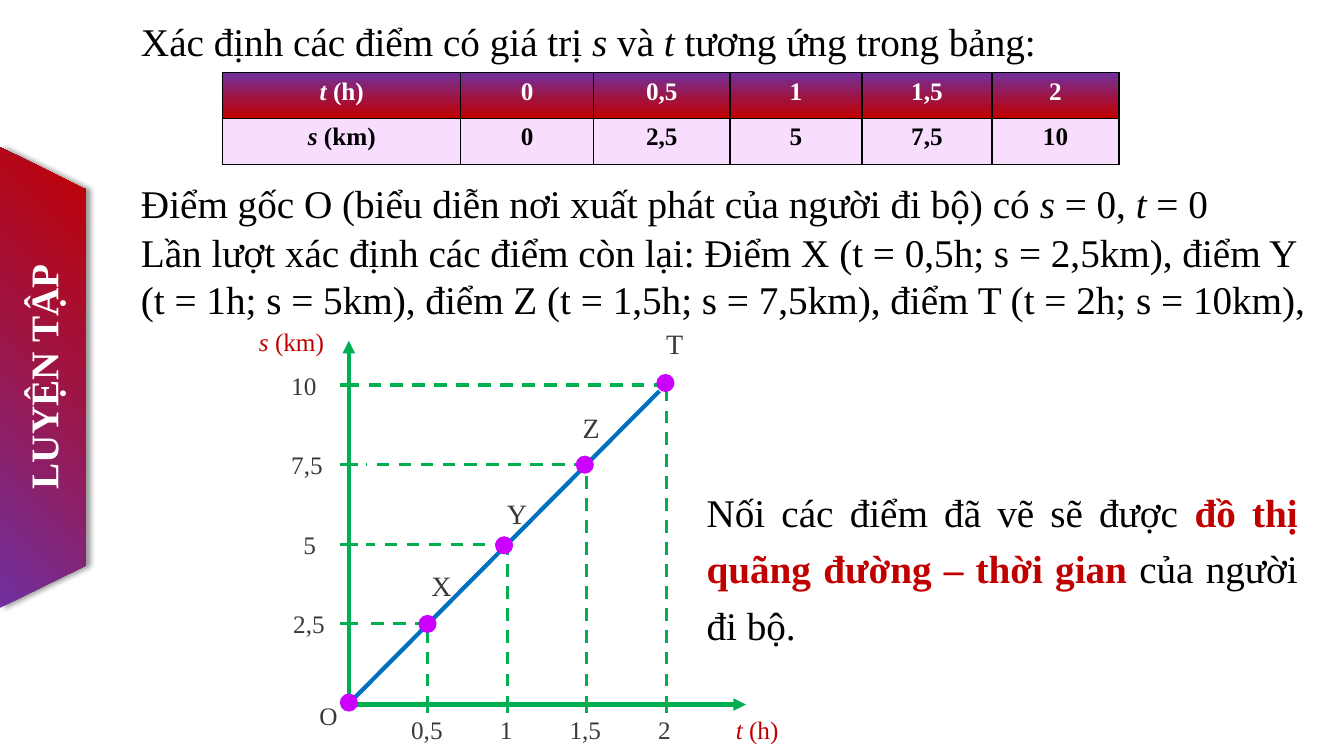
from lxml.etree import SubElement
from pptx import Presentation
from pptx.dml.color import RGBColor
from pptx.enum.dml import MSO_LINE
from pptx.enum.shapes import MSO_CONNECTOR, MSO_SHAPE
from pptx.enum.text import MSO_AUTO_SIZE, PP_ALIGN
from pptx.oxml.ns import qn
from pptx.util import Inches, Pt

# Content: a run is (text, style), style holds "b", "i" or a colour
FONT = "Times New Roman"
BLACK, WHITE, GRAY, RED = "000000", "FFFFFF", "3B3838", "C00000"
GREEN, BLUE, PURPLE, PINK = "00B050", "0070C0", "CC00FF", "F9DDFF"
BLEND = [(0, "7030A0"), (57, "A1133E"), (100, RED)]

LINES = [
    ((1.3, 0.12, 11.09, 0.57),
     [("Xác định các điểm có giá trị ",), ("s ", "i"), ("và ",), ("t", "i"),
      (" tương ứng trong bảng:",)]),
    ((1.3, 1.73, 11.09, 0.57),
     [("Điểm gốc O (biểu diễn nơi xuất phát của người đi bộ) có ",),
      ("s", "i"), (" = 0, ",), ("t", "i"), (" = 0",)]),
    ((1.3, 2.22, 11.9, 1.04),
     [("Lần lượt xác định các điểm còn lại: Điểm X (t = 0,5h; s = 2,5km), "
       "điểm Y (t = 1h; s = 5km), điểm Z (t = 1,5h; s = 7,5km), "
       "điểm T (t = 2h; s = 10km),",)]),
]
NOTE = [("Nối các điểm đã vẽ sẽ được ",),
        ("đồ thị quãng đường – thời gian ", "b", RED),
        ("của người đi bộ.",)]
ROWS = [
    ([("t", "i"), (" (h)",)], "0", "0,5", "1", "1,5", "2"),
    ([("s", "i"), (" (km)",)], "0", "2,5", "5", "7,5", "10"),
]
COLS = [2.36, 1.32, 1.35, 1.31, 1.29, 1.26]

# Axis marks: (label, left, width) along t, (label, left) along s
T_MARKS = [("0,5", 3.98, 0.63), ("1", 4.86, 0.33),
           ("1,5", 5.55, 0.58), ("2", 6.43, 0.33)]
S_MARKS = [("2,5", 2.81), ("5", 2.91), ("7,5", 2.79), ("10", 2.79)]
# Points: (name, dot centre, label corner)
POINTS = [("X", (4.24, 6.19), (4.18, 5.59)), ("Y", (5, 5.41), (4.93, 4.88)),
          ("Z", (5.8, 4.61), (5.68, 4.02)), ("T", (6.6, 3.8), (6.51, 3.19))]
LEFT, BASE, STEP, DOT = 3.45, 6.98, 0.79, 0.18

deck = Presentation()
deck.slide_width, deck.slide_height = Inches(13.33), Inches(7.5)
slide = deck.slides.add_slide(deck.slide_layouts[6])
shapes = slide.shapes


def color(code):
    return RGBColor.from_string(code)


def box(at):
    return [Inches(n) for n in at]


def write(frame, text, size=18, ink=GRAY, bold=False,
          align=PP_ALIGN.LEFT, space=None):
    para = frame.paragraphs[0]
    para.alignment = align
    if space:
        para.line_spacing = space
    for part, *style in [(text,)] if isinstance(text, str) else text:
        run = para.add_run()
        run.text = part
        font = run.font
        font.name, font.size = FONT, Pt(size)
        font.bold, font.italic = bold or "b" in style, "i" in style
        hues = [s for s in style if len(s) == 6]
        font.color.rgb = color(hues[0] if hues else ink)


def label(at, text, turn=0, **form):
    item = shapes.add_textbox(*box(at))
    item.rotation = turn
    frame = item.text_frame
    frame.word_wrap = True
    frame.auto_size = MSO_AUTO_SIZE.SHAPE_TO_FIT_TEXT
    write(frame, text, **form)


def line(start, end, ink=GREEN, width=2.25, dash=False, arrow=False):
    item = shapes.add_connector(MSO_CONNECTOR.STRAIGHT, *box(start + end))
    item.line.color.rgb, item.line.width = color(ink), Pt(width)
    if dash:
        item.line.dash_style = MSO_LINE.DASH
    if arrow:
        SubElement(item.line._get_or_add_ln(), qn("a:tailEnd"), type="triangle")
    SubElement(item._element.spPr, qn("a:effectLst"))


def dot(x, y):
    item = shapes.add_shape(MSO_SHAPE.OVAL,
                            *box((x - DOT / 2, y - DOT / 2, DOT, DOT)))
    item.shadow.inherit = False
    item.fill.solid()
    item.fill.fore_color.rgb = color(PURPLE)
    item.line.fill.background()


def tint(node, code, alpha=None):
    hue = SubElement(node, qn("a:srgbClr"), val=code)
    if alpha:
        SubElement(hue, qn("a:alpha"), val=str(alpha * 1000))


def blend(fill, owner, angle):
    fill.gradient()
    grad = owner.find(qn("a:gradFill"))
    for child in list(grad):
        grad.remove(child)
    grad.set("rotWithShape", "1")
    stops = SubElement(grad, qn("a:gsLst"))
    for pos, code in BLEND:
        tint(SubElement(stops, qn("a:gs"), pos=str(pos * 1000)), code)
    SubElement(grad, qn("a:lin"), ang=str(angle * 60000), scaled="0")


def border(cell):
    props = cell._tc.get_or_add_tcPr()
    for side in ("lnL", "lnR", "lnT", "lnB"):
        edge = SubElement(props, qn("a:" + side), w=str(Pt(1)))
        tint(SubElement(edge, qn("a:solidFill")), BLACK)
    return props


# Graph line, below everything else
line((3.52, 6.92), (6.54, 3.88), ink=BLUE, width=3)

# Side tab
tab = shapes.add_shape(MSO_SHAPE.TRAPEZOID, *box((-1.86, 3.32, 4.57, 0.85)))
tab.rotation = 90
tab.adjustments[0] = 0.493
tab.line.fill.background()
tab.shadow.inherit = False
blend(tab.fill, tab._element.spPr, 225)
glow = SubElement(tab._element.spPr.find(qn("a:effectLst")), qn("a:outerShdw"),
                  blurRad=str(Pt(4)), dist=str(Pt(3)), dir="0",
                  algn="l", rotWithShape="0")
tint(glow, BLACK, 40)
label((-0.87, 3.37, 2.59, 0.57), "LUYỆN TẬP", turn=270, size=28,
      ink=WHITE, bold=True)

# Main text
for at, text in LINES:
    label(at, text, size=28, ink=BLACK)

# Table
grid = shapes.add_table(2, 6, *box((2.21, 0.72, sum(COLS), 0.91))).table
grid.first_row = grid.horz_banding = False
for col, width in zip(grid.columns, COLS):
    col.width = Inches(width)
for r, row in enumerate(ROWS):
    for c, text in enumerate(row):
        cell = grid.cell(r, c)
        props = border(cell)
        if r == 0:
            blend(cell.fill, props, 90)
        else:
            cell.fill.solid()
            cell.fill.fore_color.rgb = color(PINK)
        write(cell.text_frame, text, ink=BLACK if r else WHITE, bold=True,
              align=PP_ALIGN.CENTER)

# Axes
line((3.46, 6.97), (3.46, 3.38), width=3, arrow=True)
line((3.46, 6.99), (7.4, 6.99), width=3, arrow=True)
label((3.07, 6.9, 0.33, 0.4), "O")
label((7.2, 7.04, 0.73, 0.4), [("t ", "i"), ("(h)",)], ink=RED)
label((2.47, 3.19, 0.9, 0.4), [("s ", "i"), ("(km)",)], ink=RED)

# Ticks, their labels and dashed guides
for n, (t_mark, s_mark) in enumerate(zip(T_MARKS, S_MARKS), 1):
    x, y = LEFT + n * STEP, BASE - n * STEP
    line((x, 6.9), (x, 7.07))
    line((3.37, y), (3.55, y))
    label((t_mark[1], 7.04, t_mark[2], 0.4), t_mark[0])
    label((s_mark[1], y - 0.2, 0.56, 0.4), s_mark[0])
    line((x, 6.81), (x, y), dash=True)
    line((x, y), (3.5 if n == 4 else 3.63, y), dash=True)

# Points
for name, spot, corner in POINTS:
    dot(*spot)
    label(corner + (0.54, 0.44), name, size=20)
dot(3.46, 6.97)

# Conclusion
label((6.91, 4.7, 6.06, 1.75), NOTE, size=28, ink=BLACK,
      align=PP_ALIGN.JUSTIFY, space=1.2)

deck.save("out.pptx")
